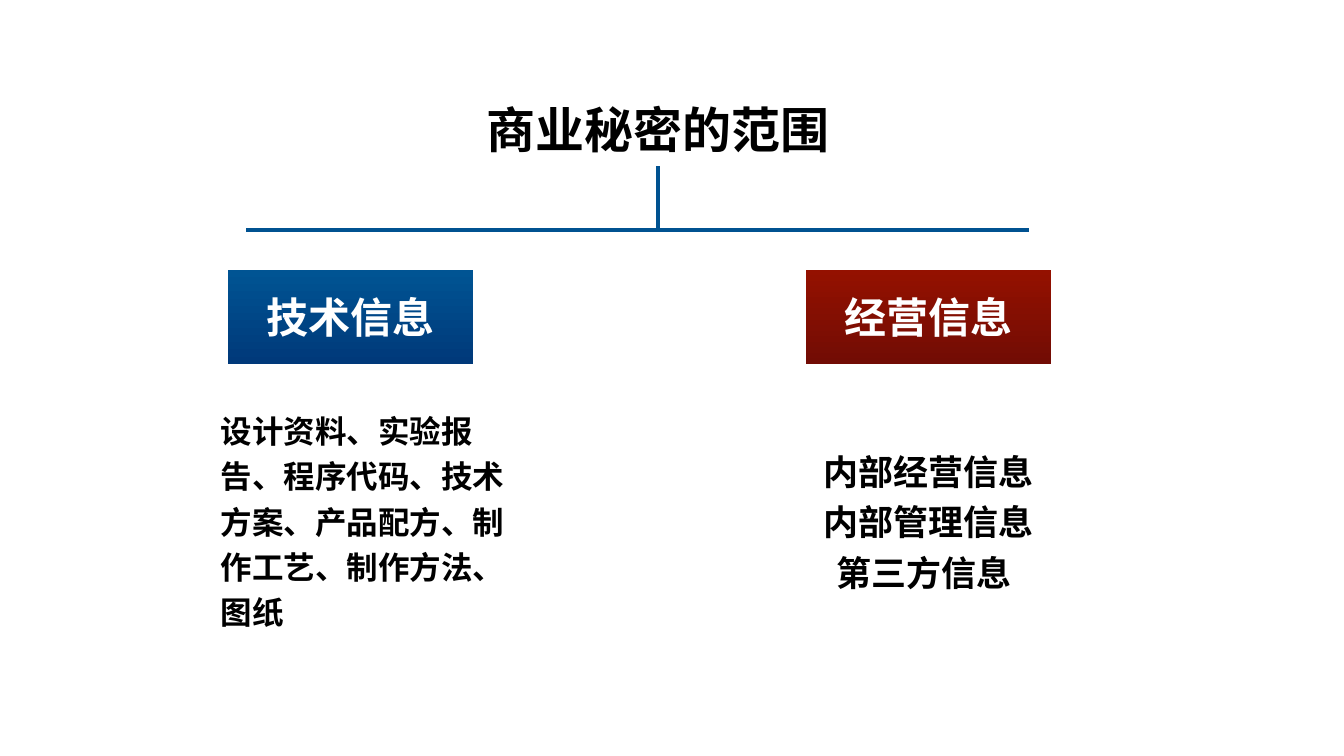
from lxml import etree
from pptx import Presentation
from pptx.dml.color import RGBColor
from pptx.enum.shapes import MSO_CONNECTOR, MSO_SHAPE
from pptx.enum.text import MSO_ANCHOR, MSO_AUTO_SIZE, PP_ALIGN
from pptx.oxml.ns import qn
from pptx.util import Cm, Pt

STRAIGHT = MSO_CONNECTOR.STRAIGHT
RECTANGLE = MSO_SHAPE.RECTANGLE
MIDDLE = MSO_ANCHOR.MIDDLE
NO_AUTOFIT = MSO_AUTO_SIZE.NONE
LEFT, CENTER = PP_ALIGN.LEFT, PP_ALIGN.CENTER

BLACK = RGBColor(0x00, 0x00, 0x00)
WHITE = RGBColor(0xFF, 0xFF, 0xFF)
LINE_BLUE = RGBColor(0x00, 0x52, 0x91)
BLUE_TOP = RGBColor(0x00, 0x54, 0x93)
BLUE_BOTTOM = RGBColor(0x00, 0x39, 0x7A)
RED_TOP = RGBColor(0x94, 0x11, 0x00)
RED_BOTTOM = RGBColor(0x72, 0x0C, 0x04)


def place(shape, left, top, width, height):
    shape.left, shape.top = Cm(left), Cm(top)
    shape.width, shape.height = Cm(width), Cm(height)


def write(shape, lines, size, color, alignment, inset, spacing):
    frame = shape.text_frame
    frame.text = "\n".join(lines)
    frame.word_wrap = True
    frame.auto_size = NO_AUTOFIT
    frame.vertical_anchor = MIDDLE
    frame.margin_left = frame.margin_right = Cm(inset)
    frame.margin_top = frame.margin_bottom = Cm(inset)
    for paragraph in frame.paragraphs:
        properties = paragraph._p.get_or_add_pPr()
        for name in ("marL", "indent", "hangingPunct"):
            properties.set(name, "0")
        etree.SubElement(properties, qn("a:buNone"))
        paragraph.alignment = alignment
        paragraph.line_spacing = spacing
        paragraph.space_before = Pt(0)
        paragraph.font.name = "Arial"
        paragraph.font.size = Pt(size)
        paragraph.font.bold = True
        paragraph.font.color.rgb = color


presentation = Presentation()
presentation.slide_width = Cm(67.74)
presentation.slide_height = Cm(38.1)
slide = presentation.slides.add_slide(presentation.slide_layouts.get_by_name("Two Content"))
title, technical_list, business_list = slide.placeholders

for begin_x, begin_y, end_x, end_y in [
    (12.42, 11.58, 51.84, 11.58),
    (33.15, 11.66, 33.15, 8.38),
]:
    branch = slide.shapes.add_connector(
        STRAIGHT, Cm(begin_x), Cm(begin_y), Cm(end_x), Cm(end_y)
    )
    branch.line.color.rgb = LINE_BLUE
    branch.line.width = Pt(6)
    etree.SubElement(branch._element.spPr, qn("a:effectLst"))

place(title, 20.22, 4.67, 25.88, 3.63)
write(title, ["商业秘密的范围"], 70, BLACK, CENTER, 0.1, 1.0)

for heading, left, colors in [
    ("技术信息", 11.48, (BLUE_TOP, BLUE_BOTTOM)),
    ("经营信息", 40.6, (RED_TOP, RED_BOTTOM)),
]:
    box = slide.shapes.add_shape(RECTANGLE, Cm(left), Cm(13.59), Cm(12.37), Cm(4.75))
    box.shadow.inherit = False
    box.line.fill.background()
    box.fill.gradient()
    box.fill.gradient_angle = 270
    for stop, position, color in zip(box.fill.gradient_stops, (0, 1), colors):
        stop.position = position
        stop.color.rgb = color
    write(box, [heading], 60, WHITE, CENTER, 0.2, 1.0)

place(technical_list, 10.92, 20.78, 16.21, 10.62)
technical_items = "设计资料、实验报告、程序代码、技术方案、产品配方、制作工艺、制作方法、图纸"
write(technical_list, [technical_items], 45, BLACK, LEFT, 0.2, 1.2)

place(business_list, 38.46, 21.69, 16.64, 8.79)
business_items = ["内部经营信息", "内部管理信息", "第三方信息 "]
write(business_list, business_items, 50, BLACK, CENTER, 0.2, 1.2)

presentation.save("out.pptx")
